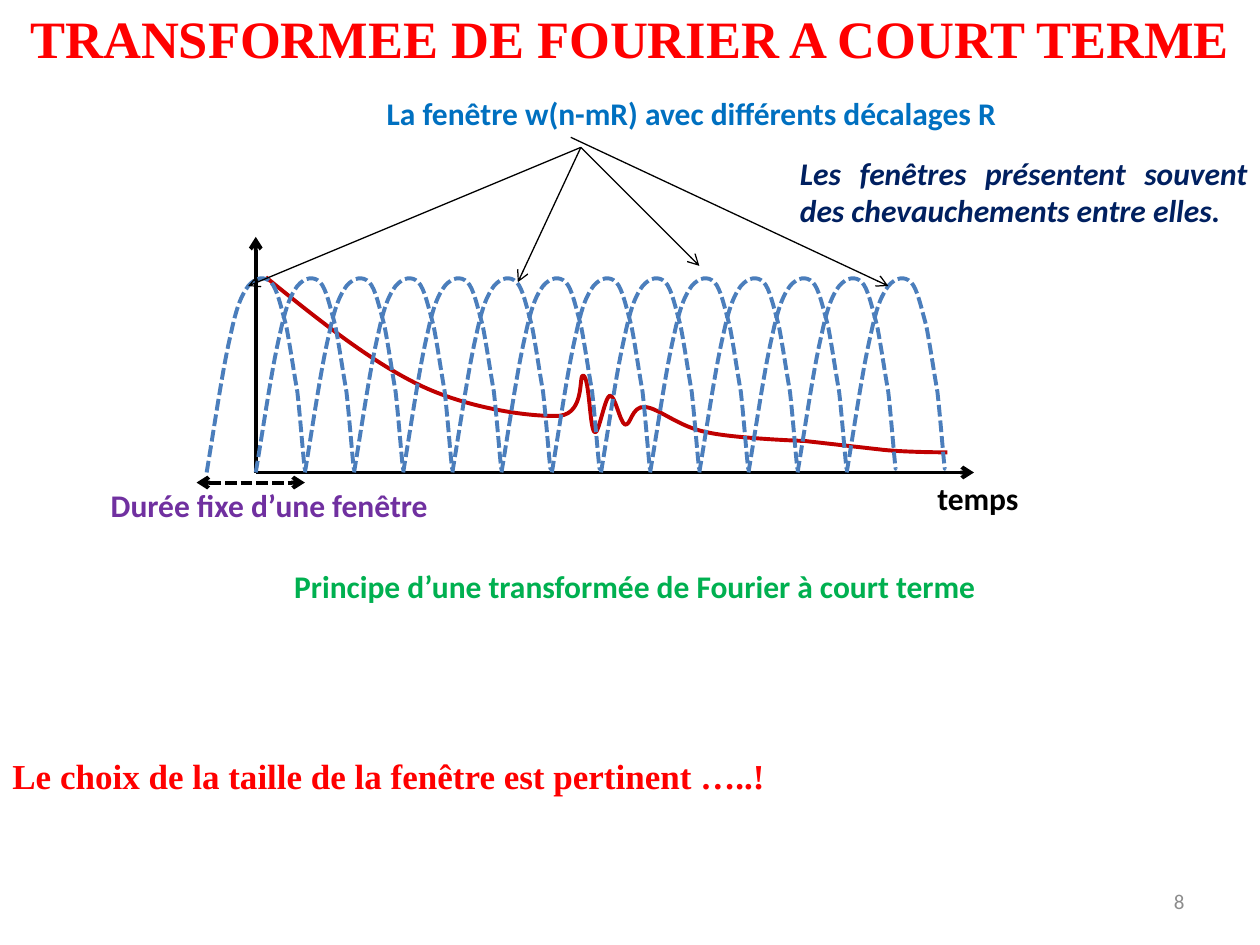
from lxml.etree import SubElement
from pptx import Presentation
from pptx.dml.color import RGBColor
from pptx.enum.dml import MSO_LINE
from pptx.enum.shapes import MSO_CONNECTOR
from pptx.enum.text import MSO_ANCHOR, PP_ALIGN
from pptx.oxml.ns import qn
from pptx.util import Pt

PX = 9144
HUES = {"red": "FF0000", "blue": "0070C0", "navy": "002060", "violet": "7030A0",
        "green": "00B050", "black": "000000", "grey": "8C8C8C",
        "signal": "C00000", "window": "4B7EBC"}
SERIF, SANS = "Times New Roman", "Calibri"
COUNT, SPAN = 14, 508
WINDOW = [(0, 156), (7, 114), (13, 72), (19, 47), (24, 23), (28, 15), (33, 8),
          (39, 1), (46, 0), (51, 5), (56, 10), (59, 25), (63, 39),
          (66, 54), (69, 75), (72, 92), (74, 110), (76, 135), (77, 145),
          (78, 156), (78, 153), (78, 153)]
SIGNAL = [(0, 0), (43, 35), (86, 69), (125, 87), (164, 105), (212, 111), (233, 110),
          (254, 108), (248, 76), (252, 78), (257, 80), (257, 121), (261, 123),
          (264, 126), (269, 95), (273, 94), (277, 93), (281, 115), (285, 117),
          (290, 118), (290, 102), (301, 103), (312, 104), (328, 119), (350, 123),
          (371, 128), (428, 130), (428, 130), (428, 130), (490, 137), (490, 137),
          (509, 139), (541, 139), (541, 139)]


def color(name):
    """Return the named colour."""
    return RGBColor.from_string(HUES[name])


def write(shape, box, text, hue, size=18, font=SANS, align=PP_ALIGN.LEFT,
          bold=True, italic=False, anchor=MSO_ANCHOR.TOP):
    """Place a text shape in its box and format its words."""
    shape.left, shape.top, shape.width, shape.height = (n * PX for n in box)
    frame = shape.text_frame
    frame.text = text
    frame.word_wrap = True
    frame.vertical_anchor = anchor
    para = frame.paragraphs[0]
    para.alignment = align
    face = para.runs[0].font
    face.name, face.size, face.bold, face.italic = font, Pt(size), bold, italic
    face.color.rgb = color(hue)


def label(slide, box, text, hue, **style):
    """Add a text box."""
    write(slide.shapes.add_textbox(0, 0, 0, 0), box, text, hue, **style)


def arrow(slide, box, start, end, width, dash=False, both=False):
    """Draw an arrow between two points of a box."""
    left, top = box[:2]
    ends = [n * PX for n in (left + start[0], top + start[1], left + end[0], top + end[1])]
    line = slide.shapes.add_connector(MSO_CONNECTOR.STRAIGHT, *ends)
    line.line.color.rgb = color("black")
    line.line.width = Pt(width)
    if dash:
        line.line.dash_style = MSO_LINE.SQUARE_DOT
    stroke = line.line._get_or_add_ln()
    for tag in ("a:headEnd", "a:tailEnd") if both else ("a:tailEnd",):
        SubElement(stroke, qn(tag), type="arrow")
    SubElement(line._element.spPr, qn("a:effectLst"))


def bend(shape):
    """Turn each three line segments of an outline into one cubic curve."""
    legs = list(shape._element.iter(qn("a:lnTo")))
    for k in range(0, len(legs), 3):
        cubic = SubElement(legs[k].getparent(), qn("a:cubicBezTo"))
        for leg in legs[k:k + 3]:
            cubic.append(leg[0])
            leg.getparent().remove(leg)


def curve(slide, knots, left, top, hue, dash=False):
    """Draw an open curve through its knots."""
    first, *rest = [(left + x, top + y) for x, y in knots]
    pen = slide.shapes.build_freeform(*first, scale=PX)
    pen.add_line_segments(rest, close=False)
    shape = pen.convert_to_shape()
    bend(shape)
    shape.shadow.inherit = False
    shape.fill.background()
    shape.line.color.rgb = color(hue)
    shape.line.width = Pt(2.25)
    if dash:
        shape.line.dash_style = MSO_LINE.SQUARE_DOT


def plot(slide, box):
    """Draw the axes, the signal, the sliding windows and the length mark."""
    left, top, width, height = box
    base = (47, 187)
    arrow(slide, box, base, (width, base[1]), 2.25)
    arrow(slide, box, base, (base[0], 0), 2.25)
    curve(slide, SIGNAL, left + 55, top + 32, "signal")
    for i in range(COUNT):
        shift = 8 + round(SPAN * i / (COUNT - 1))
        curve(slide, WINDOW, left + shift, top + 31, "window", dash=True)
    arrow(slide, box, (0, height), (86, height), 2.25, dash=True, both=True)
    label(slide, (left + 578, top + 187, 102, 40), "temps", "black")
    label(slide, (left - 78, top + 193, 281, 40), "Durée fixe d’une fenêtre", "violet")


def callout(slide, box):
    """Name the windows and point at four of them."""
    left, top, width, _ = box
    label(slide, (left, top, width, 40),
          "La fenêtre w(n-mR) avec différents décalages R", "blue")
    hub = (164, 47)
    for start, end in ((hub, (-100, 157)), (hub, (114, 154)),
                       (hub, (258, 141)), ((156, 39), (408, 157))):
        arrow(slide, box, start, end, 0.75)


def notes(slide, box):
    """Add the remark, the caption, the conclusion and the page number."""
    left, top, width, _ = box
    label(slide, (left + 625, top, 375, 71),
          "Les fenêtres présentent souvent des chevauchements entre elles.",
          "navy", italic=True, align=PP_ALIGN.JUSTIFY)
    label(slide, (left + 78, top + 328, 852, 40),
          "Principe d’une transformée de Fourier à court terme",
          "green", align=PP_ALIGN.CENTER)
    label(slide, (left, top + 477, width, 77),
          "Le choix de la taille de la fenêtre est pertinent …..!",
          "red", size=20, font=SERIF, align=PP_ALIGN.JUSTIFY)
    label(slide, (left + 717, top + 578, 233, 40), "8", "grey", size=12,
          bold=False, align=PP_ALIGN.RIGHT, anchor=MSO_ANCHOR.MIDDLE)


def main():
    """Build and save the slide."""
    deck = Presentation()
    deck.slide_width, deck.slide_height = 1000 * PX, 750 * PX
    slide = deck.slides.add_slide(deck.slide_layouts[5])
    write(slide.shapes.title, (0, 0, 1000, 61), "TRANSFORMEE DE FOURIER A COURT TERME",
          "red", size=30, font=SERIF, align=PP_ALIGN.CENTER)
    plot(slide, (156, 188, 617, 195))
    callout(slide, (297, 70, 531, 157))
    notes(slide, (0, 117, 1000, 618))
    deck.save("out.pptx")


if __name__ == "__main__":
    main()
